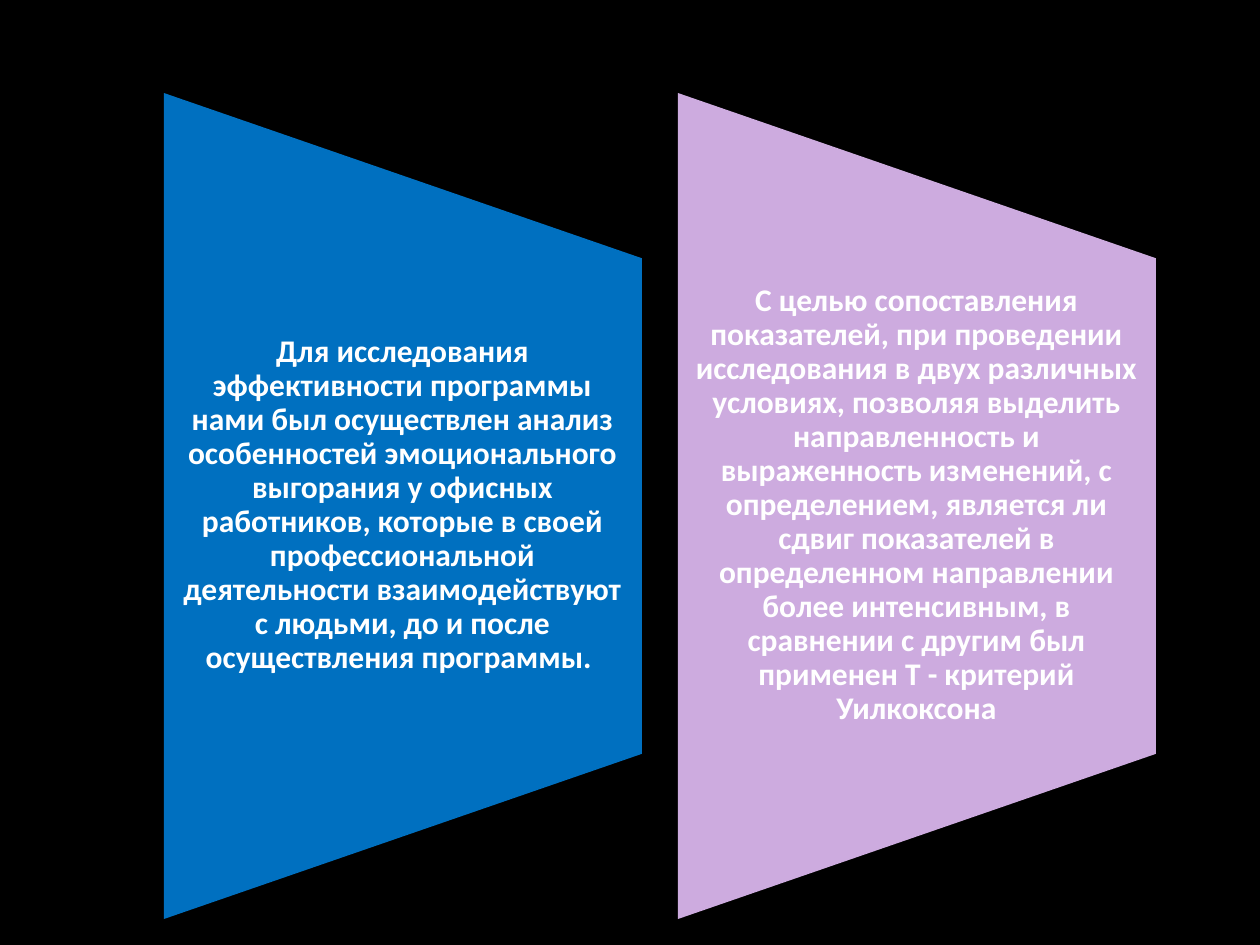
"""Build a slide with two sideways trapezoid panels describing the study method."""

from dataclasses import dataclass

import pptx
import pptx.dml.color
import pptx.enum.shapes
import pptx.enum.text
import pptx.slide
import pptx.util

PIXELS_PER_INCH = 126
SLIDE_WIDTH, SLIDE_HEIGHT = 1260, 945
PANEL_LEFT, PANEL_TOP = 164, 93
PANEL_WIDTH, PANEL_HEIGHT = 478, 826
PANEL_STEP = 514
TEXT_TOP, TEXT_HEIGHT = 258, 495
INSET_LEFT, INSET_RIGHT = 15, 16


@dataclass(frozen=True)
class Theme:
    background: str = "000000"
    study: str = "0070C0"
    criterion: str = "CDABDF"
    text: str = "FFFFFF"
    font: str = "Calibri"
    size: int = 18


@dataclass(frozen=True)
class Panel:
    color: str
    text: str


THEME = Theme()
PANELS = (
    Panel(
        THEME.study,
        "Для исследования эффективности программы нами был осуществлен анализ "
        "особенностей эмоционального выгорания у офисных работников, которые в своей "
        "профессиональной деятельности взаимодействуют с людьми, до и после "
        "осуществления программы. ",
    ),
    Panel(
        THEME.criterion,
        "С целью сопоставления показателей, при проведении исследования в двух "
        "различных условиях, позволяя выделить направленность и выраженность "
        "изменений, с определением, является ли сдвиг показателей в определенном "
        "направлении более интенсивным, в сравнении с другим был применен "
        "Т - критерий Уилкоксона",
    ),
)


def px(length: int) -> pptx.util.Emu:
    return pptx.util.Emu(round(length * 914400 / PIXELS_PER_INCH))


def rgb(color: str) -> pptx.dml.color.RGBColor:
    return pptx.dml.color.RGBColor.from_string(color)


def add_text(
    slide: pptx.slide.Slide,
    text: str,
    *,
    left: int,
    top: int,
    width: int,
    height: int,
    size: int = THEME.size,
    color: str = THEME.text,
    bold: bool = True,
    line_spacing: float = 0.9,
) -> None:
    shape = slide.shapes.add_textbox(px(left), px(top), px(width), px(height))
    frame = shape.text_frame
    frame.word_wrap = True
    frame.vertical_anchor = pptx.enum.text.MSO_ANCHOR.MIDDLE
    frame.margin_left, frame.margin_right = px(INSET_LEFT), px(INSET_RIGHT)
    frame.margin_top = frame.margin_bottom = 0
    paragraph = frame.paragraphs[0]
    paragraph.alignment = pptx.enum.text.PP_ALIGN.CENTER
    paragraph.line_spacing = line_spacing
    run = paragraph.add_run()
    run.text = text
    run.font.name = THEME.font
    run.font.size = pptx.util.Pt(size)
    run.font.bold = bold
    run.font.color.rgb = rgb(color)


def add_panel(slide: pptx.slide.Slide, panel: Panel, left: int) -> None:
    turn_offset = (PANEL_HEIGHT - PANEL_WIDTH) // 2
    shape = slide.shapes.add_shape(
        pptx.enum.shapes.MSO_SHAPE.FLOWCHART_MANUAL_OPERATION,
        px(left - turn_offset),
        px(PANEL_TOP + turn_offset),
        px(PANEL_HEIGHT),
        px(PANEL_WIDTH),
    )
    shape.rotation = 270
    shape.shadow.inherit = False
    shape.fill.solid()
    shape.fill.fore_color.rgb = rgb(panel.color)
    shape.line.fill.background()
    add_text(
        slide, panel.text, left=left, top=TEXT_TOP, width=PANEL_WIDTH, height=TEXT_HEIGHT
    )


def main() -> None:
    presentation = pptx.Presentation()
    presentation.slide_width = px(SLIDE_WIDTH)
    presentation.slide_height = px(SLIDE_HEIGHT)
    slide = presentation.slides.add_slide(presentation.slide_layouts[6])
    slide.background.fill.solid()
    slide.background.fill.fore_color.rgb = rgb(THEME.background)
    for index, panel in enumerate(PANELS):
        add_panel(slide, panel, PANEL_LEFT + index * PANEL_STEP)
    presentation.save("out.pptx")


if __name__ == "__main__":
    main()
